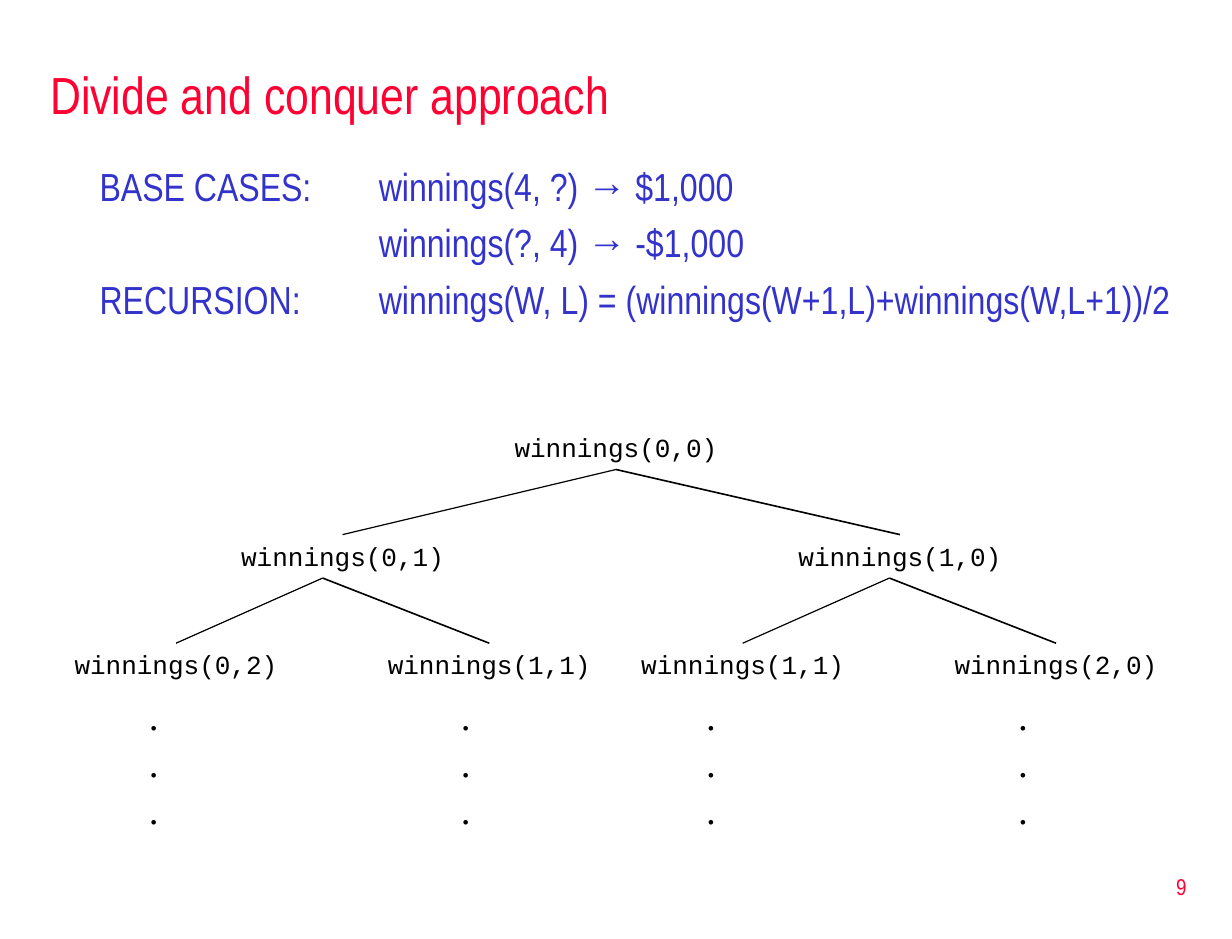
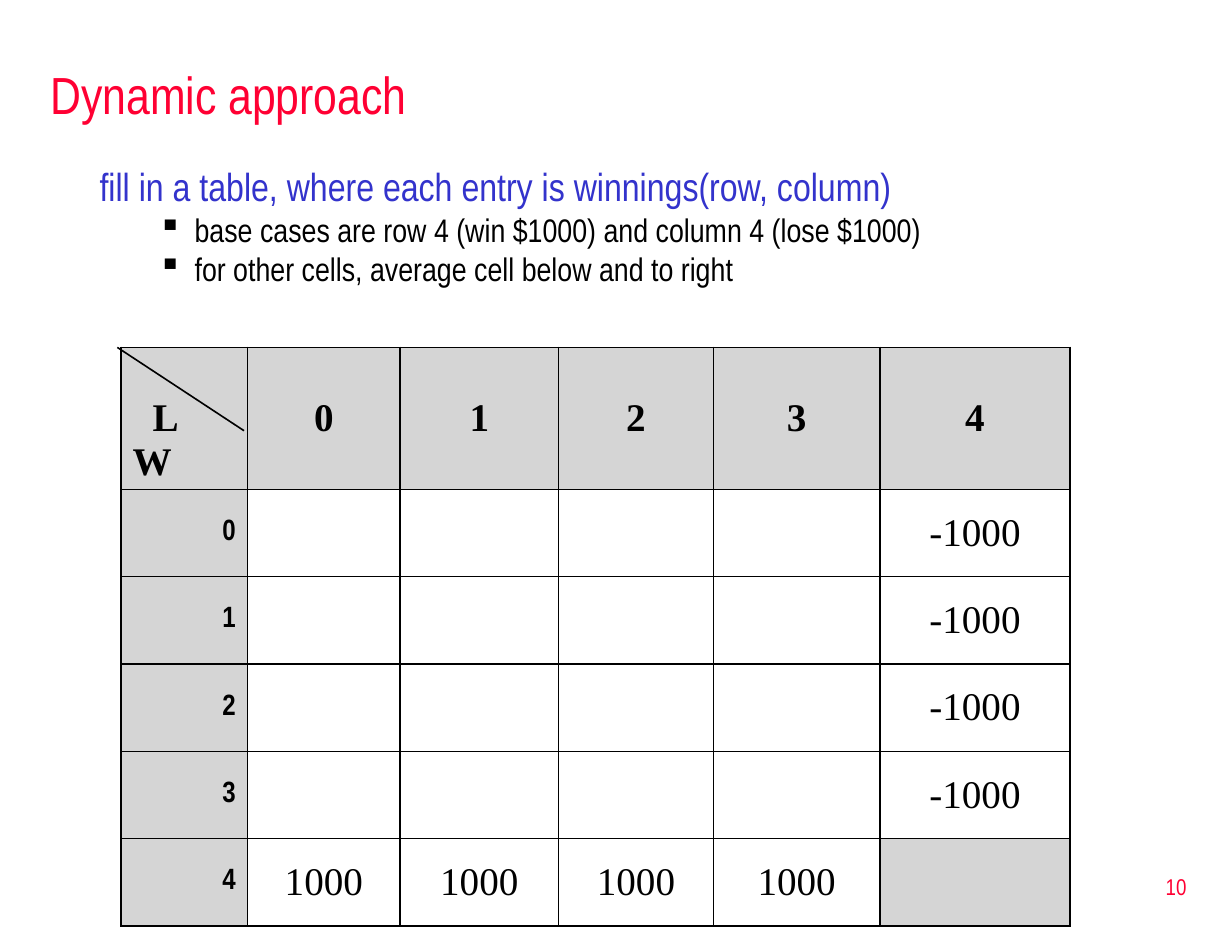
from lxml import etree
from pptx import Presentation
from pptx.dml.color import RGBColor
from pptx.enum.shapes import MSO_CONNECTOR
from pptx.enum.text import MSO_ANCHOR, PP_ALIGN
from pptx.oxml.ns import qn
from pptx.util import Emu, Inches, Pt

LEFT, CENTER, RIGHT = PP_ALIGN.LEFT, PP_ALIGN.CENTER, PP_ALIGN.RIGHT
TOP, MIDDLE, BOTTOM = MSO_ANCHOR.TOP, MSO_ANCHOR.MIDDLE, MSO_ANCHOR.BOTTOM
STRAIGHT = MSO_CONNECTOR.STRAIGHT

COLORS = {"title": "FF0033", "body": "3333CC", "ink": "000000",
          "header": "D5D5D5", "paper": "FFFFFF"}
NARROW, MONO, SERIF = "Arial Narrow", "Courier New", "Times New Roman"

STYLES = {
    "title": {"name": NARROW, "size": 32, "color": "title"},
    "page": {"name": NARROW, "size": 14, "color": "title"},
    "body": {"name": NARROW, "size": 24, "color": "body"},
    "bullet": {"name": NARROW, "size": 20, "color": "ink"},
    "call": {"name": MONO, "size": 16, "color": "ink"},
    "value": {"name": SERIF, "size": 24, "color": "ink"},
    "column": {"name": SERIF, "size": 24, "color": "ink", "bold": True},
    "row": {"name": NARROW, "size": 18, "color": "ink", "bold": True},
}
PARAGRAPHS = {
    "body": {"space_before": Pt(6)},
    "bullet": {"space_before": Pt(5), "line_spacing": 0.8},
    "dots": {"line_spacing": Pt(28.8)},
}
INDENTS = {"body": (0.38, -0.38), "bullet": (0.81, -0.31)}

SLIDE_SIZE = (10.5, 8)
TITLE_AREA = (0.33, 0.42, 9.92, 0.75)
BODY_AREA = (0.75, 1.33, 9.52, 1.75)
PAGE_AREA = (8.02, 7.29, 2.19, 0.53)

DIVIDE = {
    "title": "Divide and conquer approach",
    "page": 9,
    "body": [
        ("body", "BASE CASES:\twinnings(4, ?) → $1,000"),
        ("body", "\t\t\twinnings(?, 4) → -$1,000"),
        ("body", "RECURSION:\twinnings(W, L) = (winnings(W+1,L)+winnings(W,L+1))/2"),
    ],
}
DYNAMIC = {
    "title": "Dynamic approach",
    "page": 10,
    "body": [
        ("body", "fill in a table, where each entry is winnings(row, column)"),
        ("bullet", "base cases are row 4 (win $1000) and column 4 (lose $1000)"),
        ("bullet", "for other cells, average cell below and to right"),
    ],
}

TREE_LEVELS = [
    [("0,0", 5.25)],
    [("0,1", 2.92), ("1,0", 7.67)],
    [("0,2", 1.5), ("1,1", 4.17), ("1,1", 6.33), ("2,0", 9)],
]
FORKS = [[5.25], [2.75, 7.58]]
TREE_TOP, LEVEL_STEP = 3.63, 0.925
CALL_WIDTH, CALL_HEIGHT = 2.17, 0.37
BRANCH_WIDTHS = (0.75, 1)
DOT_LEFTS = [1.17, 3.83, 5.92, 8.58]
DOT_TOP, DOT_WIDTH, DOT_HEIGHT = 5.84, 0.33, 1.31

GAMES = 4
WIN, LOSS = "1000", "-1000"
TABLE_LEFT, TABLE_TOP, TABLE_BOTTOM = 1.03, 2.96, 7.89
COLUMN_WIDTHS = [1.08, 1.3, 1.35, 1.32, 1.42, 1.62]
HEADER_HEIGHT = 1.21
CORNER_INDENT = 0.17
DIAGONAL = ((1, 2.96), (2.08, 3.67))


def rgb(name):
    return RGBColor.from_string(COLORS[name])


def add_span(para, text, style):
    span = para.add_run()
    span.text = text
    for key, value in STYLES[style].items():
        if key == "color":
            span.font.color.rgb = rgb(value)
        else:
            setattr(span.font, key, Pt(value) if key == "size" else value)


def write(frame, lines, align=LEFT, layout=None):
    for index, (style, text) in enumerate(lines):
        para = frame.add_paragraph() if index else frame.paragraphs[0]
        para.alignment = align
        for key, value in PARAGRAPHS.get(layout or style, {}).items():
            setattr(para, key, value)
        if style in INDENTS:
            indent_paragraph(para, style)
        add_span(para, text, style)


def indent_paragraph(para, style):
    properties = para._p.get_or_add_pPr()
    margin, indent = INDENTS[style]
    values = {"marL": margin, "indent": indent, "defTabSz": 1}
    for key, value in values.items():
        properties.set(key, str(Inches(value)))
    if style == "bullet":
        para.level = 1
        etree.SubElement(properties, qn("a:buChar"), char="▪")


def add_text(page, area, lines, align=LEFT, anchor=TOP, layout=None):
    box = page.shapes.add_textbox(*map(Inches, area))
    box.text_frame.word_wrap = True
    box.text_frame.vertical_anchor = anchor
    write(box.text_frame, lines, align, layout)


def add_line(page, start, end, width):
    line = page.shapes.add_connector(STRAIGHT, *map(Inches, start + end))
    line.line.color.rgb = rgb("ink")
    line.line.width = Pt(width)
    etree.SubElement(line._element.spPr, qn("a:effectLst"))


def add_page(deck, content):
    page = deck.slides.add_slide(deck.slide_layouts[6])
    page.background.fill.solid()
    page.background.fill.fore_color.rgb = rgb("paper")
    add_text(page, TITLE_AREA, [("title", content["title"])], anchor=MIDDLE)
    add_text(page, BODY_AREA, content["body"])
    add_text(page, PAGE_AREA, [("page", str(content["page"]))], RIGHT, MIDDLE)
    return page


def add_tree(page):
    for level, nodes in enumerate(TREE_LEVELS):
        top = TREE_TOP + level * LEVEL_STEP
        for index, (state, center) in enumerate(nodes):
            area = (center - CALL_WIDTH / 2, top, CALL_WIDTH, CALL_HEIGHT)
            add_text(page, area, [("call", f"winnings({state})")], CENTER)
            if level:
                parent, side = divmod(index, 2)
                fork = (FORKS[level - 1][parent], top - LEVEL_STEP + CALL_HEIGHT)
                add_line(page, fork, (center, top), BRANCH_WIDTHS[side])
    for left in DOT_LEFTS:
        area = (left, DOT_TOP, DOT_WIDTH, DOT_HEIGHT)
        add_text(page, area, [("value", ".")] * 3, layout="dots")


def cell_content(row, column):
    if row == 0 and column == 0:
        return [("column", "L"), ("column", "W")], LEFT
    if row == 0:
        return [("column", str(column - 1))], CENTER
    if column == 0:
        return [("row", str(row - 1))], RIGHT
    won, lost = row - 1 == GAMES, column - 1 == GAMES
    if won == lost:
        return [], CENTER
    return [("value", WIN if won else LOSS)], CENTER


def add_borders(cell):
    properties = cell._tc.get_or_add_tcPr()
    for side in ("lnL", "lnR", "lnT", "lnB"):
        border = etree.SubElement(properties, qn(f"a:{side}"), w=str(Pt(1)))
        fill = etree.SubElement(border, qn("a:solidFill"))
        etree.SubElement(fill, qn("a:srgbClr"), val=COLORS["ink"])


def add_winnings_table(page):
    count = GAMES + 2
    height = TABLE_BOTTOM - TABLE_TOP
    area = (TABLE_LEFT, TABLE_TOP, sum(COLUMN_WIDTHS), height)
    table = page.shapes.add_table(count, count, *map(Inches, area)).table
    table.first_row = table.horz_banding = False
    row_height = (height - HEADER_HEIGHT) / (count - 1)
    for index, width in enumerate(COLUMN_WIDTHS):
        table.columns[index].width = Inches(width)
        table.rows[index].height = Inches(row_height if index else HEADER_HEIGHT)
    for row in range(count):
        for column in range(count):
            cell = table.cell(row, column)
            lines, align = cell_content(row, column)
            write(cell.text_frame, lines, align)
            cell.vertical_anchor = MIDDLE if row or column else BOTTOM
            add_borders(cell)
            shaded = row == 0 or column == 0 or row == column == count - 1
            cell.fill.solid()
            cell.fill.fore_color.rgb = rgb("header" if shaded else "paper")
    corner = table.cell(0, 0).text_frame.paragraphs[0]
    corner._p.get_or_add_pPr().set("marL", str(Inches(CORNER_INDENT)))
    add_line(page, *DIAGONAL, 1)


def main():
    """Build the two slides on computing expected winnings."""
    deck = Presentation()
    deck.slide_width, deck.slide_height = (Emu(Inches(side)) for side in SLIDE_SIZE)
    add_tree(add_page(deck, DIVIDE))
    add_winnings_table(add_page(deck, DYNAMIC))
    deck.save("out.pptx")


if __name__ == "__main__":
    main()
